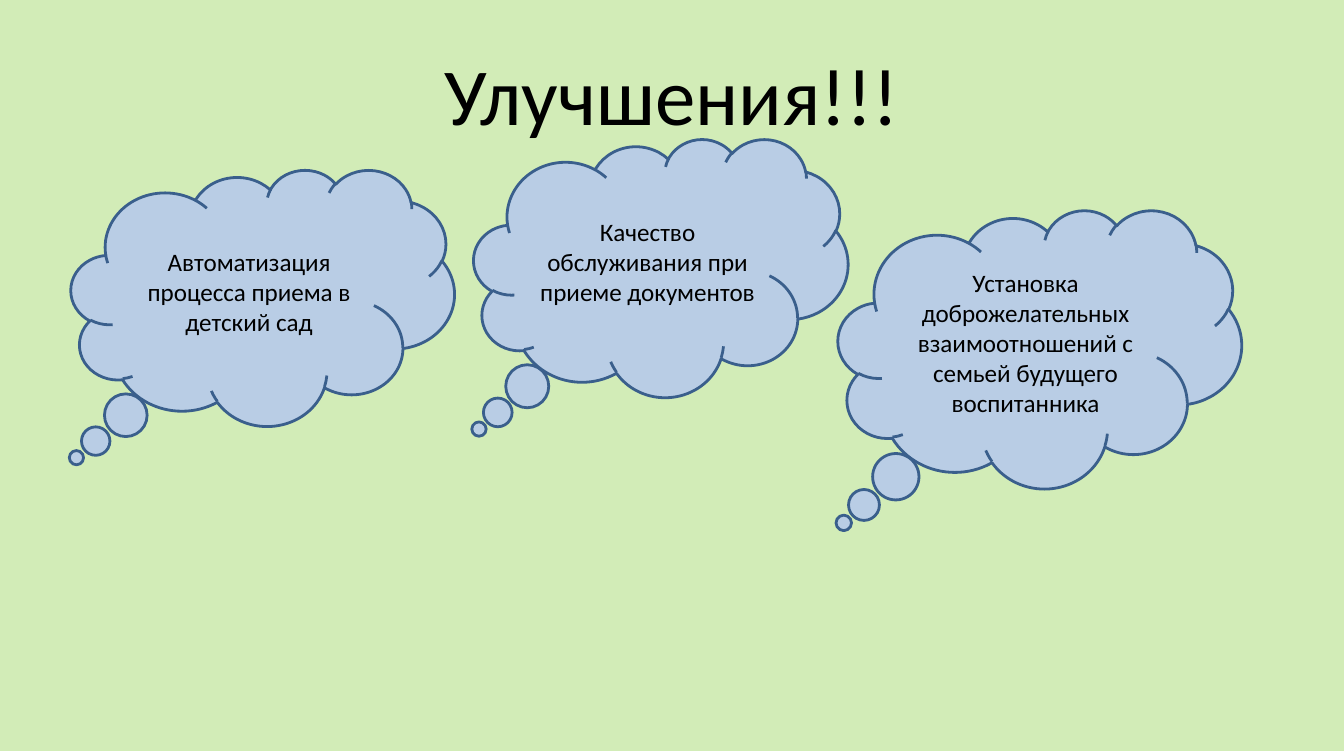
from pptx import Presentation
from pptx.dml.color import RGBColor
from pptx.enum.shapes import MSO_SHAPE
from pptx.enum.text import MSO_ANCHOR, PP_ALIGN
from pptx.util import Cm, Pt

COLORS = {"background": "D2ECB7", "cloud": "B9CDE5", "outline": "3A5F8C", "text": "000000"}
FONT = "Calibri"
WIDE_INSETS = (0.33, 0.18)
NORMAL_INSETS = (0.25, 0.13)

# Text, box (left, top, width, height in cm) and insets of each cloud
CLOUDS = [
    ("Автоматизация процесса приема в детский сад",
     (1.8, 4.29, 9.7, 6.48), WIDE_INSETS),
    ("Качество обслуживания при приеме документов",
     (11.99, 3.51, 9.47, 6.53), NORMAL_INSETS),
    ("Установка доброжелательных взаимоотношений с семьей будущего воспитанника",
     (21.21, 5.31, 10.21, 7.04), NORMAL_INSETS),
]


def color(name):
    return RGBColor.from_string(COLORS[name])


def set_text(sp, text, size, insets):
    tf = sp.text_frame
    tf.word_wrap = True
    tf.vertical_anchor = MSO_ANCHOR.MIDDLE
    tf.margin_left = tf.margin_right = Cm(insets[0])
    tf.margin_top = tf.margin_bottom = Cm(insets[1])
    tf.text = text
    p = tf.paragraphs[0]
    p.alignment = PP_ALIGN.CENTER
    r = p.runs[0]
    r.font.name = FONT
    r.font.size = Pt(size)
    r.font.color.rgb = color("text")


def add_title(s, text, box):
    sp = s.shapes.add_textbox(*map(Cm, box))
    set_text(sp, text, 58, WIDE_INSETS)


def add_cloud(s, text, box, insets):
    sp = s.shapes.add_shape(MSO_SHAPE.CLOUD_CALLOUT, *map(Cm, box))
    sp.shadow.inherit = False
    # Thought bubbles trail off to the lower left
    sp.adjustments[0] = -0.486
    sp.adjustments[1] = 0.625
    sp.fill.solid()
    sp.fill.fore_color.rgb = color("cloud")
    sp.line.color.rgb = color("outline")
    sp.line.width = Pt(2)
    set_text(sp, text, 18, insets)


def improvements_slide(prs):
    s = prs.slides.add_slide(prs.slide_layouts[6])
    s.background.fill.solid()
    s.background.fill.fore_color.rgb = color("background")
    add_title(s, "Улучшения!!!", (1.7, 0.76, 30.61, 3.18))
    for text, box, insets in CLOUDS:
        add_cloud(s, text, box, insets)


def main():
    prs = Presentation()
    prs.slide_width, prs.slide_height = Cm(34.01), Cm(19)
    improvements_slide(prs)
    prs.save("out.pptx")


if __name__ == "__main__":
    main()
